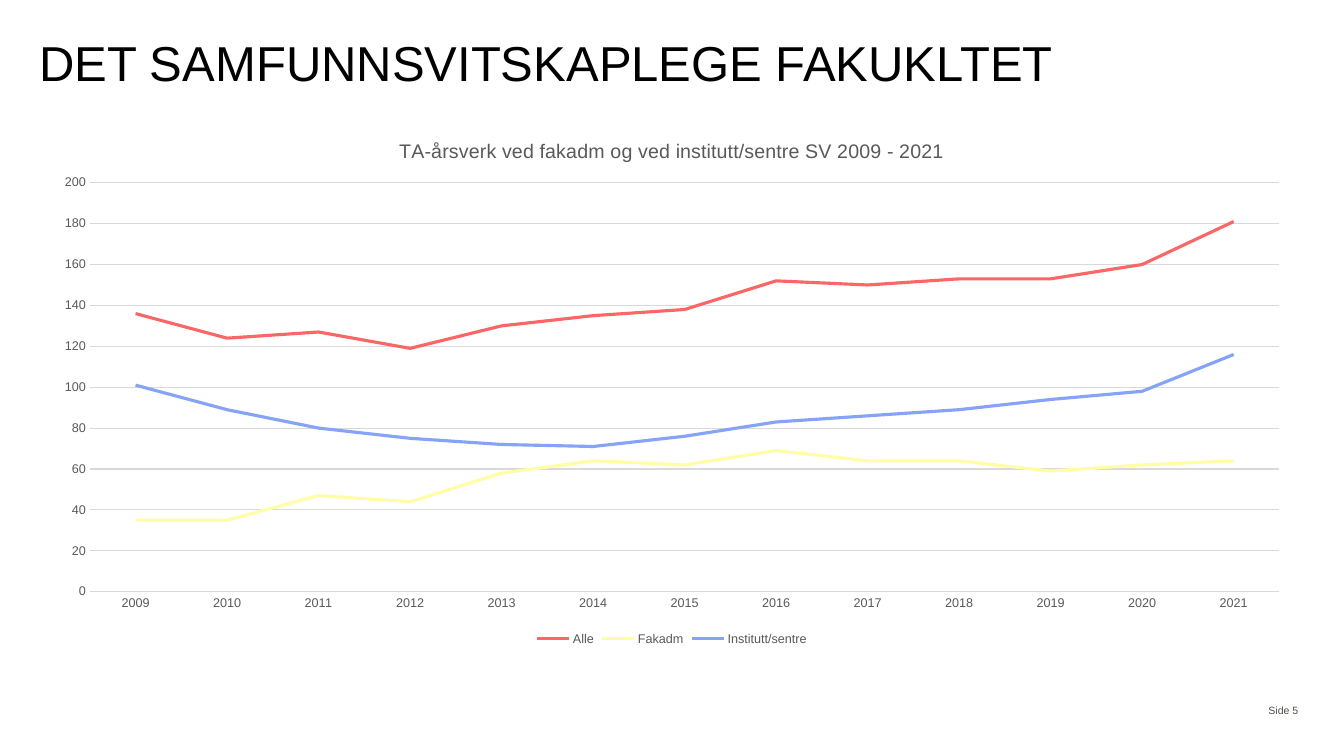
"""Builds the slide on staff years at the faculty of social sciences."""
import lxml.etree
import pptx
import pptx.chart.data
import pptx.dml.color
import pptx.enum.chart
import pptx.enum.text
import pptx.oxml.ns
import pptx.util

Pt = pptx.util.Pt
RGBColor = pptx.dml.color.RGBColor
PP_ALIGN = pptx.enum.text.PP_ALIGN
MSO_ANCHOR = pptx.enum.text.MSO_ANCHOR
XL = pptx.enum.chart
qn = pptx.oxml.ns.qn

BLACK = RGBColor(0x00, 0x00, 0x00)
BROWN = RGBColor(0x52, 0x4B, 0x48)
GREY = RGBColor(0x59, 0x59, 0x59)
GRID = RGBColor(0xD9, 0xD9, 0xD9)
RED = RGBColor(0xFB, 0x66, 0x66)
YELLOW = RGBColor(0xFF, 0xFE, 0xA7)
BLUE = RGBColor(0x86, 0xA4, 0xF7)

YEARS = [str(year) for year in range(2009, 2022)]
STAFF = [
    ("Alle", RED, [136, 124, 127, 119, 130, 135, 138, 152, 150, 153, 153, 160, 181]),
    ("Fakadm", YELLOW, [35, 35, 47, 44, 58, 64, 62, 69, 64, 64, 59, 62, 64]),
    ("Institutt/sentre", BLUE, [101, 89, 80, 75, 72, 71, 76, 83, 86, 89, 94, 98, 116]),
]


class Deck:
    font = "Arial"

    def __init__(self):
        self.prs = pptx.Presentation()
        self.prs.slide_width, self.prs.slide_height = Pt(960), Pt(540)
        self.s = self.prs.slides.add_slide(self.prs.slide_layouts[6])

    def style(self, font, size, color):
        font.name, font.size, font.bold = self.font, Pt(size), False
        font.color.rgb = color

    def stroke(self, line, color, width):
        line.color.rgb, line.width = color, Pt(width)

    def text(self, box, text, size, color, align=PP_ALIGN.LEFT,
             anchor=MSO_ANCHOR.TOP, spacing=1.0):
        tf = self.s.shapes.add_textbox(*map(Pt, box)).text_frame
        tf.text = text
        tf.word_wrap = True
        tf.vertical_anchor = anchor
        p = tf.paragraphs[0]
        p.alignment, p.line_spacing = align, spacing
        self.style(p.runs[0].font, size, color)
        return tf

    def line_chart(self, box, title, categories, series, plot):
        data = pptx.chart.data.CategoryChartData()
        data.categories = categories
        for name, _, values in series:
            data.add_series(name, values)
        chart = self.s.shapes.add_chart(
            XL.XL_CHART_TYPE.LINE, *map(Pt, box), data).chart
        self.style(chart.font, 10, BLACK)
        chart.has_title = True
        tf = chart.chart_title.text_frame
        tf.text = title
        self.style(tf.paragraphs[0].runs[0].font, 14, GREY)
        chart.chart_title.include_in_layout = False
        chart.has_legend = True
        chart.legend.position = XL.XL_LEGEND_POSITION.BOTTOM
        chart.legend.include_in_layout = False
        self.style(chart.legend.font, 9, GREY)
        for axis in (chart.category_axis, chart.value_axis):
            axis.major_tick_mark = axis.minor_tick_mark = XL.XL_TICK_MARK.NONE
            self.style(axis.tick_labels.font, 9, GREY)
        self.stroke(chart.category_axis.format.line, GRID, 0.75)
        axis = chart.value_axis
        axis.minimum_scale, axis.maximum_scale, axis.major_unit = 0, 200, 20
        axis.format.line.fill.background()
        axis.has_major_gridlines = True
        self.stroke(axis.major_gridlines.format.line, GRID, 0.75)
        chart.plots[0].vary_by_categories = False
        for line, (_, color, _) in zip(chart.plots[0].series, series):
            line.smooth = False
            line.marker.style = XL.XL_MARKER_STYLE.NONE
            self.stroke(line.format.line, color, 2.25)
        self.place_plot(chart, plot)

    def place_plot(self, chart, plot):
        area = chart.plots[0]._element.getparent()
        for old in area.findall(qn("c:layout")):
            area.remove(old)
        layout = lxml.etree.Element(qn("c:layout"))
        manual = lxml.etree.SubElement(layout, qn("c:manualLayout"))
        settings = [("layoutTarget", "inner"), ("xMode", "edge"), ("yMode", "edge")]
        for tag, value in settings + list(zip("xywh", plot)):
            lxml.etree.SubElement(manual, qn("c:" + tag)).set("val", str(value))
        area.insert(0, layout)


def main():
    deck = Deck()
    deck.text((887, 493, 47.5, 29), "Side 5", 7.5, BROWN,
              PP_ALIGN.RIGHT, MSO_ANCHOR.MIDDLE)
    tf = deck.text((28, 28, 904, 42.5), "DET SAMFUNNSVITSKAPLEGE FAKUKLTET",
                   35, BLACK, spacing=0.9)
    tf.margin_left = tf.margin_right = tf.margin_top = tf.margin_bottom = Pt(0)
    deck.line_chart((28, 85, 904, 379.5),
                    "TA-årsverk ved fakadm og ved institutt/sentre SV 2009 - 2021",
                    YEARS, STAFF, (0.04, 0.12, 0.94, 0.77))
    deck.prs.save("out.pptx")


if __name__ == "__main__":
    main()
